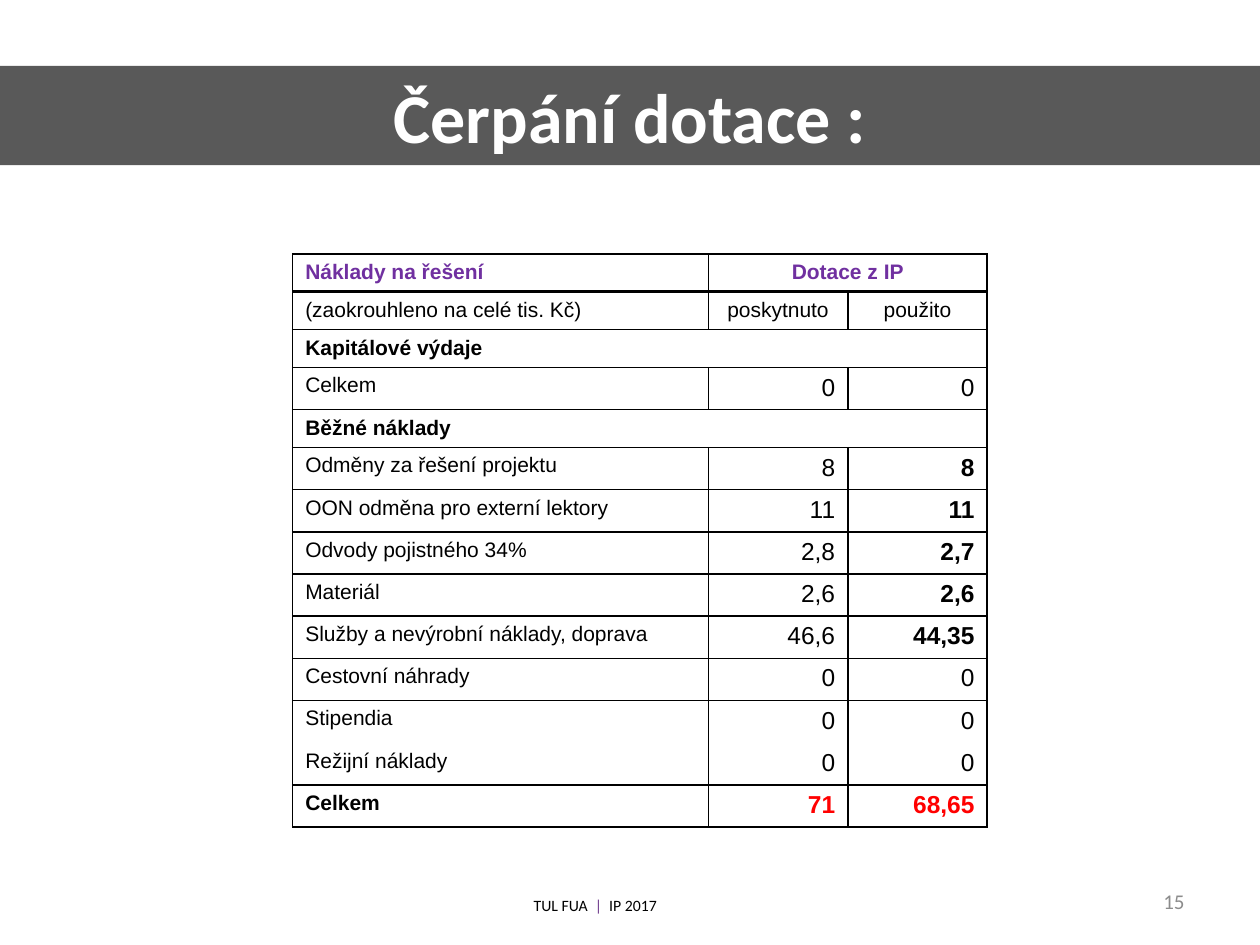
from lxml import etree
from pptx import Presentation
from pptx.dml.color import RGBColor
from pptx.enum.shapes import MSO_SHAPE
from pptx.enum.text import MSO_ANCHOR, PP_ALIGN
from pptx.oxml.ns import qn
from pptx.util import Cm, Pt

LEFT, CENTER, RIGHT, JUSTIFY = PP_ALIGN.LEFT, PP_ALIGN.CENTER, PP_ALIGN.RIGHT, PP_ALIGN.JUSTIFY
MIDDLE, TOP = MSO_ANCHOR.MIDDLE, MSO_ANCHOR.TOP
RECTANGLE = MSO_SHAPE.RECTANGLE

COLORS = {
    "band": "595959", "white": "FFFFFF", "black": "000000", "number": "8C8C8C",
    "heading": "7030A0", "divider": "6B368A", "total": "FF0000",
}


class SlideBuilder:
    """Holds the style and the current slide."""

    heading_font, table_font = "Calibri", "Arial"

    def __init__(self, slide):
        self.slide = slide

    def color(self, name):
        return RGBColor.from_string(COLORS[name])

    def style(self, paragraph, font, size, color, align, bold=False):
        paragraph.alignment = align
        paragraph.font.name, paragraph.font.size = font, Pt(size)
        paragraph.font.bold = bold
        paragraph.font.color.rgb = self.color(color)

    def band(self, box, title):
        band = self.slide.shapes.add_shape(RECTANGLE, *map(Cm, box))
        band.shadow.inherit = False
        band.fill.solid()
        band.fill.fore_color.rgb = self.color("band")
        band.line.fill.background()
        band.text_frame.text = title
        band.text_frame.vertical_anchor = MIDDLE
        self.style(band.text_frame.paragraphs[0], self.heading_font, 40, "white", CENTER, True)

    def text(self, box, parts, size, align, anchor=TOP):
        """parts: (text, colour name) pairs on one line."""
        frame = self.slide.shapes.add_textbox(*map(Cm, box)).text_frame
        frame.word_wrap = True
        frame.vertical_anchor = anchor
        line = frame.paragraphs[0]
        self.style(line, self.heading_font, size, parts[0][1], align)
        for words, color in parts:
            run = line.add_run()
            run.text = words
            run.font.color.rgb = self.color(color)

    def table(self, left, top, widths, heights):
        frame = self.slide.shapes.add_table(
            len(heights), len(widths), Cm(left), Cm(top), Cm(sum(widths)), Cm(sum(heights)))
        table = frame.table
        table.first_row = table.horz_banding = False
        for column, width in zip(table.columns, widths):
            column.width = Cm(width)
        for row, height in zip(table.rows, heights):
            row.height = Cm(height)
        return table

    def cell(self, cell, words, size, color, align, bold):
        cell.text = words
        self.style(cell.text_frame.paragraphs[0], self.table_font, size, color, align, bold)

    def borders(self, cell, top, bottom):
        """Side borders are 1 pt; a width of 0 leaves a border out."""
        cell.fill.background()
        properties = cell._tc.get_or_add_tcPr()
        sides = (("L", 1), ("R", 1), ("T", top), ("B", bottom))
        for index, (side, width) in enumerate(sides):
            line = etree.Element(qn(f"a:ln{side}"), w=str(Pt(width)))
            if width:
                fill = etree.SubElement(line, qn("a:solidFill"))
                etree.SubElement(fill, qn("a:srgbClr"), val=COLORS["black"])
            else:
                etree.SubElement(line, qn("a:noFill"))
            properties.insert(index, line)


# Label, granted, used, used in bold
COSTS = [
    ("Náklady na řešení", "Dotace z IP", "", False),
    ("(zaokrouhleno na celé tis. Kč)", "poskytnuto", "použito", False),
    ("Kapitálové výdaje", "", "", False),
    ("Celkem", "0", "0", False),
    ("Běžné náklady", "", "", False),
    ("Odměny za řešení projektu", "8", "8", True),
    ("OON odměna pro externí lektory", "11", "11", True),
    ("Odvody pojistného 34%", "2,8", "2,7", True),
    ("Materiál", "2,6", "2,6", True),
    ("Služby a nevýrobní náklady, doprava", "46,6", "44,35", True),
    ("Cestovní náhrady", "0", "0", False),
    ("Stipendia", "0", "0", False),
    ("Režijní náklady", "0", "0", False),
    ("Celkem", "71", "68,65", True),
]
HEADER, SUBHEADER, SECTIONS, TOTAL = 0, 1, (2, 4), len(COSTS) - 1
# Widths of the lines below the header and between the two open rows
RULES = {1: 2, 12: 0}


def add_costs(builder):
    heights = [0.76 if row <= SUBHEADER or row in SECTIONS else 0.85
               for row in range(len(COSTS))]
    table = builder.table(5.9, 5.12, [8.38, 2.81, 2.81], heights)
    for row, (label, granted, used, used_bold) in enumerate(COSTS):
        for column in range(3):
            builder.borders(table.cell(row, column), RULES.get(row, 1), RULES.get(row + 1, 1))
        heading = row == HEADER
        total = row == TOTAL
        # Merged headings
        if heading:
            table.cell(row, 1).merge(table.cell(row, 2))
        elif row in SECTIONS:
            table.cell(row, 0).merge(table.cell(row, 2))
        # Label and amounts
        builder.cell(table.cell(row, 0), label, 12, "heading" if heading else "black",
                     JUSTIFY, heading or total or row in SECTIONS)
        size, align = (12, CENTER) if row <= SUBHEADER else (14, RIGHT)
        color = "heading" if heading else "total" if total else "black"
        amounts = ((granted, heading or total), (used, used_bold))
        for column, (amount, bold) in enumerate(amounts, start=1):
            if amount:
                builder.cell(table.cell(row, column), amount, size, color, align, bold)


def main():
    deck = Presentation()
    deck.slide_width, deck.slide_height = Cm(25.4), Cm(19.05)
    builder = SlideBuilder(deck.slides.add_slide(deck.slide_layouts[6]))

    # Page number
    builder.text((18.2, 17.66, 5.93, 1.01), [("15", "number")], 12, RIGHT, MIDDLE)
    # Costs
    add_costs(builder)
    # Title band
    builder.band((0, 1.33, 25.4, 2), "Čerpání dotace :")
    # Footer
    footer = [("TUL FUA  ", "black"), ("| ", "divider"), (" IP 2017", "black")]
    builder.text((1.5, 17.93, 21, 0.64), footer, 9, CENTER)

    deck.save("out.pptx")


if __name__ == "__main__":
    main()
